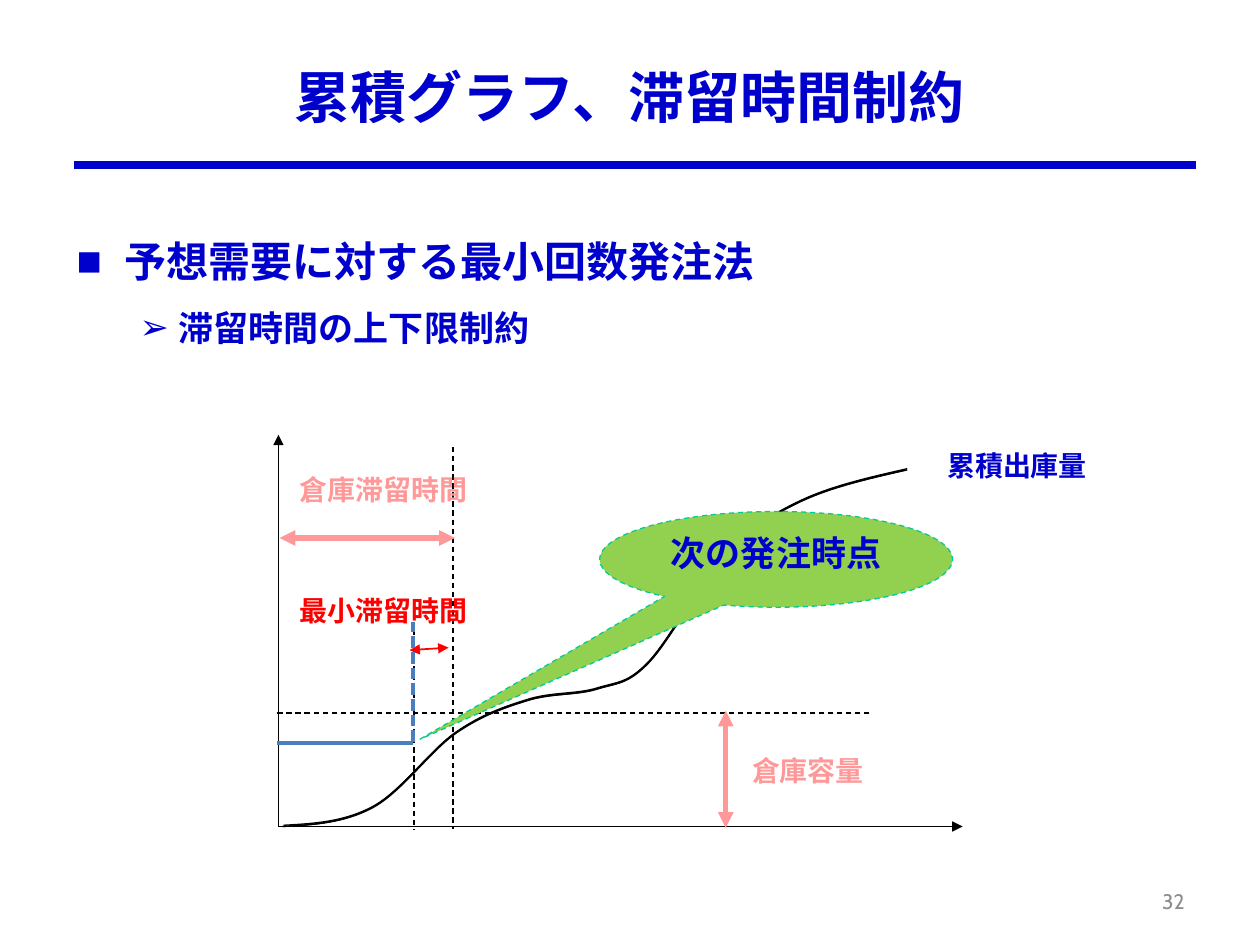
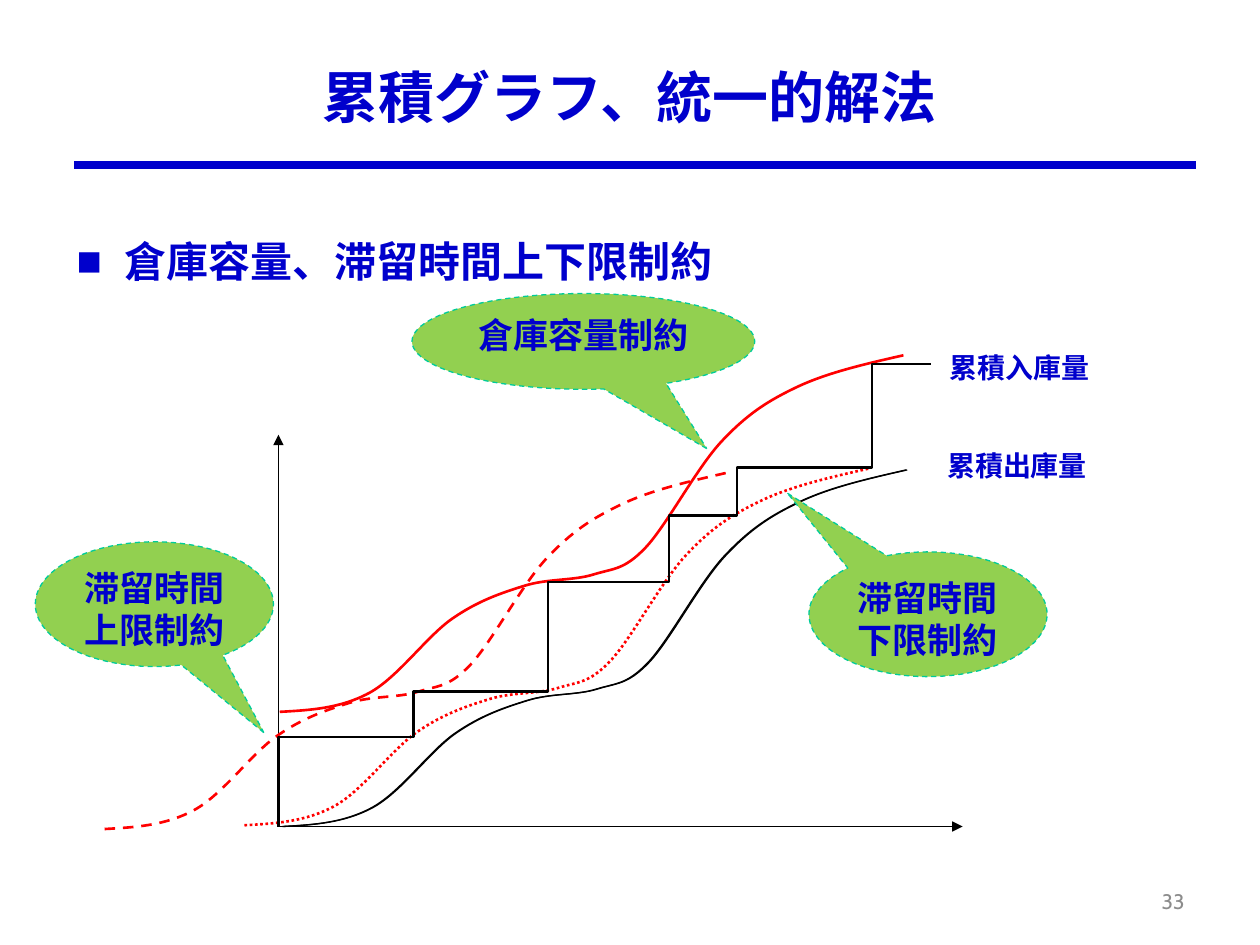
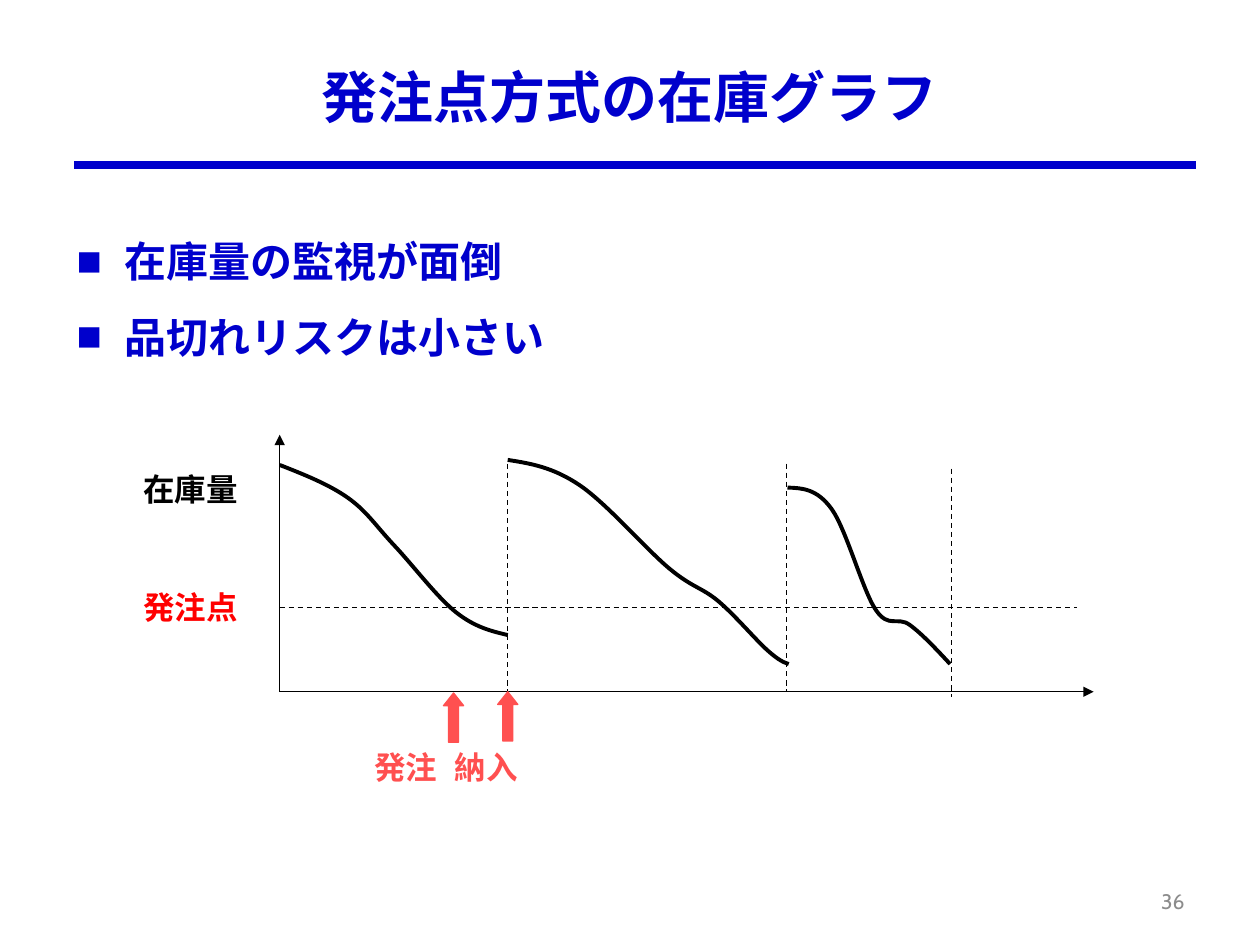
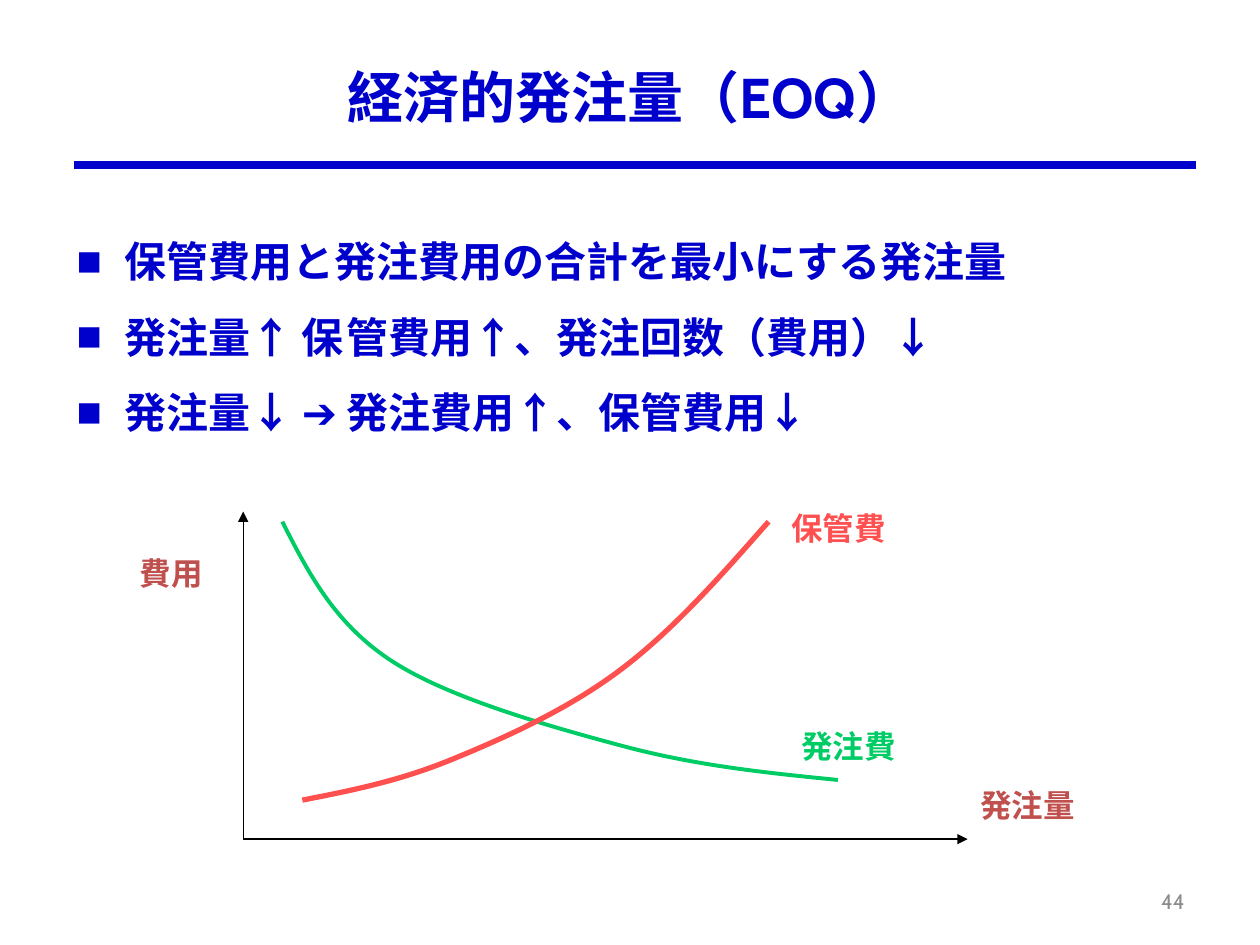
import lxml.etree
import pptx
import pptx.dml.color
import pptx.enum.dml
import pptx.enum.shapes
import pptx.enum.text
import pptx.oxml.ns
import pptx.util

COLUMNS, ROWS = 100, 75
CELL = pptx.util.Inches(0.1)

NAVY, BLACK, GREY = "0000CC", "000000", "8C8C8C"
RED, CORAL, PINK, BRICK = "FF0000", "FF5050", "FF9999", "C0504D"
LIME, TEAL, GREEN, STEEL = "92D050", "00CC99", "00CC66", "4B7EBC"
HEADING_FONT, LABEL_FONT, OUTLINE_FONT = "Cabin", "Arial", "Noto Sans CJK JP"

DASH = pptx.enum.dml.MSO_LINE.DASH
SHORT_DASH = pptx.enum.dml.MSO_LINE.SQUARE_DOT
DOT = pptx.enum.dml.MSO_LINE.ROUND_DOT
CENTER = pptx.enum.text.PP_ALIGN.CENTER
RIGHT = pptx.enum.text.PP_ALIGN.RIGHT
MIDDLE = pptx.enum.text.MSO_ANCHOR.MIDDLE
TOP = pptx.enum.text.MSO_ANCHOR.TOP
SHAPES = pptx.enum.shapes.MSO_SHAPE

BULLETS = [("■", 3.8, -3.8, 24), ("➢", 8.1, -3.1, 20)]
DEMAND = [(22.4, 65.6), (29.5, 64.1), (36.1, 58.2), (41.8, 55.6), (47.3, 54.7),
          (51.4, 52.6), (57.5, 44.1), (63.5, 39.8), (71.9, 37.3)]


def grid(*cells):
    """Turn numbers of grid cells into lengths."""
    return [round(cell * CELL) for cell in cells]


def color(hex_code):
    """Turn a hex string into a colour."""
    return pptx.dml.color.RGBColor.from_string(hex_code)


def add_xml(parent, tag, **attributes):
    """Append a drawing element with attributes."""
    return lxml.etree.SubElement(parent, pptx.oxml.ns.qn(tag), attributes)


def write(frame, text, size=18, font=HEADING_FONT, ink=NAVY, bold=True,
          align=None, anchor=TOP, wrap=True):
    """Fill a text frame, one paragraph per line of text."""
    frame.text = text
    frame.word_wrap = wrap
    frame.vertical_anchor = anchor
    for paragraph in frame.paragraphs:
        paragraph.alignment = align
        for run in paragraph.runs:
            run.font.size = pptx.util.Pt(size)
            run.font.bold = bold
            run.font.color.rgb = color(ink)
            run.font.name = font
            add_xml(run.font._element, "a:ea", typeface=HEADING_FONT)


def style_line(line, ink, width, dash=None):
    """Set the colour, width and dash of a line."""
    line.color.rgb = color(ink)
    line.width = pptx.util.Pt(width)
    if dash:
        line.dash_style = dash


def add_label(slide, text, box, **style):
    """Place a text box on the grid."""
    label = slide.shapes.add_textbox(*grid(*box))
    write(label.text_frame, text, **style)
    return label


def add_line(slide, start, end, ink=BLACK, width=0.75, dash=None, arrows=()):
    """Draw a straight line with arrowheads at the named ends."""
    line = slide.shapes.add_connector(
        pptx.enum.shapes.MSO_CONNECTOR.STRAIGHT, *grid(*start, *end))
    style_line(line.line, ink, width, dash)
    for arrow in arrows:
        add_xml(line.line._get_or_add_ln(), f"a:{arrow}End", type="triangle")
    add_xml(line._element.spPr, "a:effectLst")
    return line


def add_axes(slide, origin, right, top):
    """Draw the two arrowed axes of a graph."""
    add_line(slide, origin, (right, origin[1]), arrows=["tail"])
    add_line(slide, origin, (origin[0], top), arrows=["tail"])


def add_outline(slide, points, ink=BLACK, width=0.75, dash=None):
    """Draw an open, unfilled outline through points."""
    corners = [grid(*point) for point in points]
    builder = slide.shapes.build_freeform(*corners[0])
    builder.add_line_segments(corners[1:], close=False)
    outline = builder.convert_to_shape()
    outline.fill.background()
    outline.shadow.inherit = False
    style_line(outline.line, ink, width, dash)
    return outline


def add_curve(slide, points, shift=(0, 0), **style):
    """Draw a smooth curve through points, each slope following its neighbours."""
    outline = add_outline(slide, [(x + shift[0], y + shift[1]) for x, y in points], **style)
    qn = pptx.oxml.ns.qn
    knots = [complex(int(point.get("x")), int(point.get("y")))
             for point in outline._element.iter(qn("a:pt"))]
    slopes = [(after - before) / 6 for before, after in zip(knots, knots[2:])]
    segments = list(outline._element.iter(qn("a:lnTo")))
    for index, segment in enumerate(segments):
        start, end = knots[index:index + 2]
        if index == 0:
            trail = end - slopes[0]
            lead = (start + trail) / 2
        else:
            lead = start + slopes[index - 1]
            is_last = index == len(slopes)
            trail = (lead + end) / 2 if is_last else end - slopes[index]
        segment.tag = qn("a:cubicBezTo")
        for place, handle in enumerate((lead, trail)):
            segment.insert(place, lxml.etree.Element(
                qn("a:pt"), x=str(round(handle.real)), y=str(round(handle.imag))))


def add_preset(slide, preset, box, adjustments, fill, ink, dash=None):
    """Draw a filled preset shape."""
    shape = slide.shapes.add_shape(preset, *grid(*box))
    for index, value in enumerate(adjustments):
        shape.adjustments[index] = value
    shape.shadow.inherit = False
    shape.fill.solid()
    shape.fill.fore_color.rgb = color(fill)
    style_line(shape.line, ink, 0.75, dash)
    return shape


def add_callout(slide, text, box, pointer):
    """Draw a green speech bubble."""
    bubble = add_preset(slide, SHAPES.OVAL_CALLOUT, box, pointer, LIME, TEAL, DASH)
    write(bubble.text_frame, text, size=20, font=OUTLINE_FONT, align=CENTER)


def add_series_label(slide, text, left, top):
    """Name a cumulative curve at its right end."""
    add_label(slide, text, (left, top, 13.3, 3.7), size=16, font=OUTLINE_FONT, wrap=False)


def add_points(slide, points):
    """Write the bulleted points, given as text and level."""
    body = add_label(slide, "\n".join(text for text, _ in points), (5.1, 16.2, 92, 15.9))
    for paragraph, (_, level) in zip(body.text_frame.paragraphs, points):
        mark, margin, indent, size = BULLETS[level]
        paragraph.level = level
        paragraph.line_spacing = 1.5
        paragraph.runs[0].font.size = pptx.util.Pt(size)
        properties = paragraph._p.get_or_add_pPr()
        for name, length in zip(("marL", "indent"), grid(margin, indent)):
            properties.set(name, str(length))
        add_xml(properties, "a:buFont", typeface="Arial")
        add_xml(properties, "a:buChar", char=mark)


def add_slide(deck, title, number, points):
    """Start a slide with its title, points and number."""
    slide = deck.slides.add_slide(deck.slide_layouts[5])
    heading = slide.shapes.title
    heading.left, heading.top, heading.width, heading.height = grid(5, 0.5, 90, 14.2)
    write(heading.text_frame, title, size=32, align=CENTER, anchor=MIDDLE)
    add_label(slide, str(number), (71.7, 69.5, 23.3, 4), size=12, ink=GREY,
              bold=False, align=RIGHT, anchor=MIDDLE)
    add_points(slide, points)
    return slide


def add_title_rule(deck, slide):
    """Put the blue rule under the title on the shared layout."""
    rule = add_line(slide, (5.9, 13.1), (94.9, 13.1), NAVY, 4.5)
    slide.slide_layout.shapes._spTree.append(rule._element)


def add_demand_graph(slide, shifts):
    """Draw the axes, the cumulative outflow and its name."""
    add_axes(slide, (22.1, 65.6), 76.4, 34.5)
    for shift in shifts:
        add_curve(slide, DEMAND, shift)
    add_series_label(slide, "累積出庫量", 74.2, 35.1)


def build_stay_limits(deck):
    """Build the slide on limits to the time in store."""
    slide = add_slide(deck, "累積グラフ、滞留時間制約", 32,
                      [("予想需要に対する最小回数発注法", 0), ("滞留時間の上下限制約", 1)])
    add_title_rule(deck, slide)
    add_demand_graph(slide, [(0, 0), (0.1, 0), (0.1, -0.1)])
    for ink in (RED, BLACK):
        add_line(slide, (69, 56.6), (22, 56.6), ink, dash=DASH)
    for time, top in ((35.9, 35.5), (36, 35.5), (32.85, 50)):
        add_line(slide, (time, top), (time, 65.8), dash=DASH)
    both = ["head", "tail"]
    add_line(slide, (57.6, 56.4), (57.6, 65.7), PINK, 3, arrows=both)
    add_line(slide, (22.2, 42.7), (36.1, 42.7), PINK, 3, arrows=both)
    add_line(slide, (32.5, 51.6), (35.6, 51.4), RED, 1, arrows=both)
    for text, left, top, width, ink in (("倉庫容量", 58.7, 59.3, 12.1, PINK),
                                        ("倉庫滞留時間", 22.8, 37, 15.6, PINK),
                                        ("最小滞留時間", 22.8, 46.6, 15.6, RED)):
        add_label(slide, text, (left, top, width, 3.7), size=16, font=LABEL_FONT, ink=ink)
    add_line(slide, (22, 59), (32.8, 59), STEEL, 2.25)
    add_callout(slide, "次の発注時点", (47.6, 40.6, 28, 7.6), (-1.01, 1.88))
    add_line(slide, (32.8, 58.9), (32.8, 49.4), STEEL, 2.25, SHORT_DASH)


def build_unified_solution(deck):
    """Build the slide that joins all the limits."""
    slide = add_slide(deck, "累積グラフ、統一的解法", 33,
                      [("倉庫容量、滞留時間上下限制約", 0)])
    add_demand_graph(slide, [(0, 0), (0.1, 0)])
    for shift, dash in (((-0.2, -9.1), None), ((-14.1, 0.2), DASH), ((-3, -0.1), DOT)):
        add_curve(slide, DEMAND, shift, ink=RED, width=1.5, dash=dash)
    deliveries = [(22.1, 58.5), (32.8, 54.9), (43.5, 46.2), (53.1, 40.9),
                  (58.5, 37.1), (69.2, 28.9)]
    inflow = [(22.1, 65.6)]
    for time, level in deliveries:
        inflow += [(time, inflow[-1][1]), (time, level)]
    add_outline(slide, inflow[1:] + [(73.9, 28.9)], width=1.5)
    add_callout(slide, "倉庫容量制約", (32.7, 23.3, 27.2, 7.6), (0.36, 1.12))
    add_callout(slide, "滞留時間\n上限制約", (2.8, 43, 18.9, 9.9), (0.46, 1.03))
    add_callout(slide, "滞留時間\n下限制約", (64.2, 43.8, 18.9, 9.9), (-0.59, -0.97))
    add_series_label(slide, "累積入庫量", 74.4, 27.3)


def build_order_point(deck):
    """Build the slide on stock under the order point system."""
    slide = add_slide(deck, "発注点方式の在庫グラフ", 36,
                      [("在庫量の監視が面倒", 0), ("品切れリスクは小さい", 0)])
    add_axes(slide, (22.2, 54.9), 86.8, 34.5)
    for time, top in ((22.2, 36.8), (40.3, 36.8), (62.4, 36.8), (75.5, 37.2)):
        add_line(slide, (time, top), (time, top + 18.1), dash=DASH)
    add_line(slide, (22.2, 48.2), (85.5, 48.2), dash=DASH)
    stock_cycles = [
        [(22.2, 36.9), (27.6, 39.5), (31.3, 43.3), (36.2, 48.6), (40.3, 50.4)],
        [(40.3, 36.5), (46, 38.5), (53.1, 45.1), (57, 47.7), (60.9, 51.6), (62.6, 52.7)],
        [(62.5, 38.7), (66, 40.4), (69.5, 48.4), (72.2, 49.6), (75.4, 52.7)],
    ]
    for cycle in stock_cycles:
        add_curve(slide, cycle, width=2.25)
    for left, top in ((39.5, 54.9), (35.2, 55)):
        add_preset(slide, SHAPES.UP_ARROW, (left, top, 1.6, 3.9), (0.5, 0.63), CORAL, CORAL)
    for text, left, top, width, ink in (("納入", 35.1, 58.9, 12.6, CORAL),
                                        ("発注", 28.7, 58.9, 10.9, CORAL),
                                        ("在庫量", 10.4, 36.8, 11, BLACK),
                                        ("発注点", 10.4, 46.2, 11, RED)):
        add_label(slide, text, (left, top, width, 4), ink=ink)


def build_economic_quantity(deck):
    """Build the slide on the economic order quantity."""
    slide = add_slide(deck, "経済的発注量（EOQ）", 44,
                      [("保管費用と発注費用の合計を最小にする発注量", 0),
                       ("発注量↑ ➔ 保管費用↑、発注回数（費用）↓", 0),
                       ("発注量↓ ➔ 発注費用↑、保管費用↓", 0)])
    add_axes(slide, (19.3, 66.6), 76.8, 40.6)
    ordering_cost = [(22.4, 41.4), (31, 52.4), (49.4, 59.2), (66.5, 61.9)]
    storage_cost = [(24, 63.5), (35.8, 60.3), (49.2, 53.2), (61, 41.4)]
    add_curve(slide, ordering_cost, ink=GREEN, width=2.25)
    add_curve(slide, storage_cost, ink=CORAL, width=3)
    for text, left, top, width, ink in (("発注量", 76.8, 61.9, 10.2, BRICK),
                                        ("発注費", 62.6, 57.2, 10.2, GREEN),
                                        ("保管費", 61.8, 39.9, 10.2, CORAL),
                                        ("費用", 10.1, 43.5, 7.6, BRICK)):
        add_label(slide, text, (left, top, width, 4), ink=ink)


def main():
    """Build the deck and save it."""
    deck = pptx.Presentation()
    deck.slide_width, deck.slide_height = grid(COLUMNS, ROWS)
    build_stay_limits(deck)
    build_unified_solution(deck)
    build_order_point(deck)
    build_economic_quantity(deck)
    deck.save("out.pptx")


if __name__ == "__main__":
    main()
